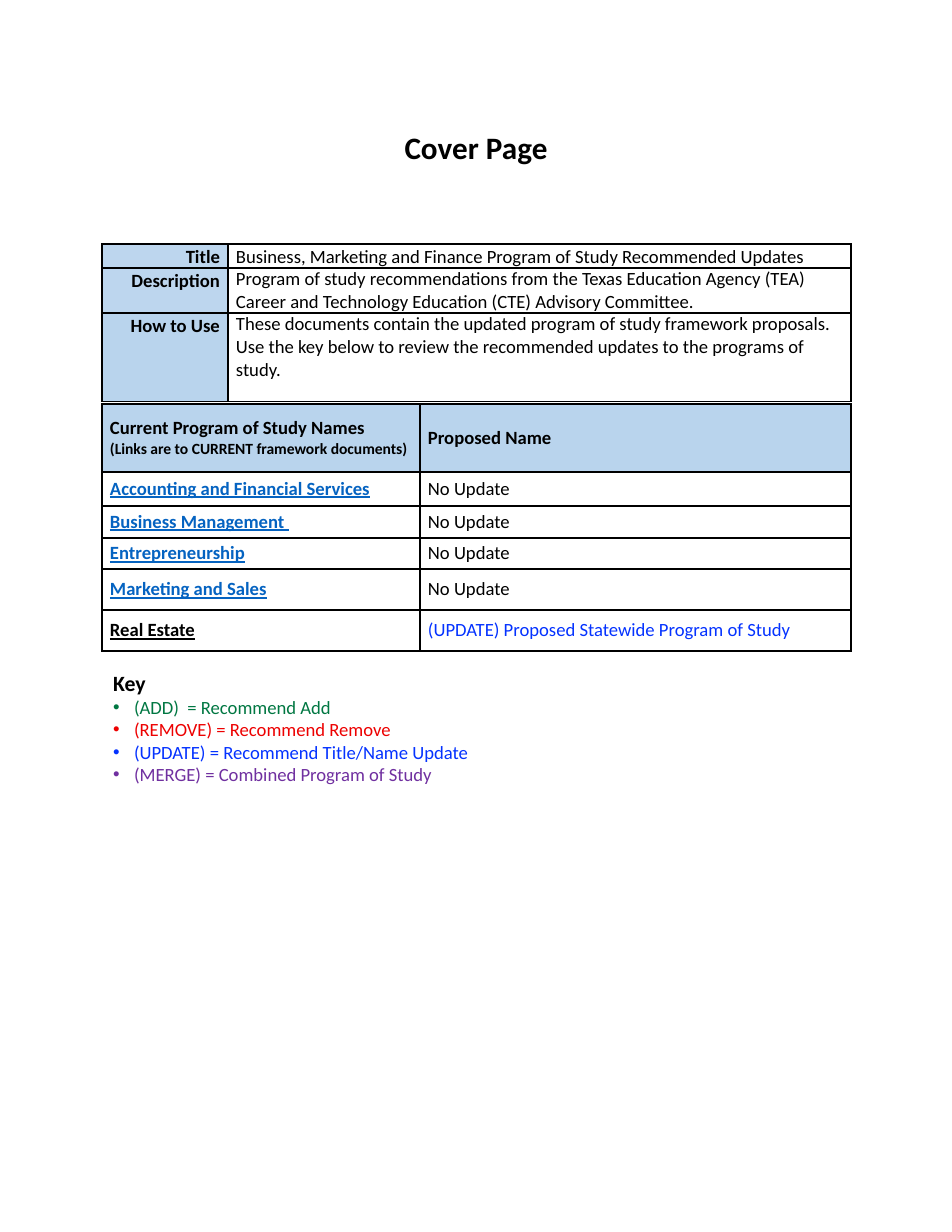
from lxml import etree
from pptx import Presentation
from pptx.dml.color import RGBColor
from pptx.enum.text import MSO_ANCHOR, MSO_AUTO_SIZE, PP_ALIGN
from pptx.oxml.ns import qn
from pptx.util import Emu, Pt

TOP, MIDDLE = MSO_ANCHOR.TOP, MSO_ANCHOR.MIDDLE
CENTER, RIGHT, LEFT = PP_ALIGN.CENTER, PP_ALIGN.RIGHT, PP_ALIGN.LEFT
GROW = MSO_AUTO_SIZE.SHAPE_TO_FIT_TEXT

COLORS = {
    "black": "000000", "white": "FFFFFF", "pale": "BDD6EE", "sky": "B9D4ED",
    "link": "0563C1", "green": "007742", "red": "ED0000", "blue": "0432FF",
    "purple": "7030A0",
}
FONT = "Calibri"
SCALE = 914400 / 112


def px(count):
    return Emu(round(count * SCALE))


def rgb(name):
    return RGBColor.from_string(COLORS[name])


def style(font, color="black", **values):
    base = {"name": FONT, "size": Pt(12), "bold": False}
    for key, value in {**base, **values}.items():
        setattr(font, key, value)
    font.color.rgb = rgb(color)


def write(par, text, align=LEFT, **look):
    par.alignment = align
    run = par.add_run()
    run.text = text
    style(run.font, **look)


def border(cell):
    props = cell._tc.get_or_add_tcPr()
    for spot, side in enumerate(("lnL", "lnR", "lnT", "lnB")):
        line = etree.Element(qn(f"a:{side}"), w=str(Pt(1)))
        fill = etree.SubElement(line, qn("a:solidFill"))
        etree.SubElement(fill, qn("a:srgbClr"), val=COLORS["black"])
        props.insert(spot, line)


def format_cell(cell, fill, anchor):
    values = {"margin_left": px(8), "margin_right": px(8), "margin_top": 0,
              "margin_bottom": 0, "vertical_anchor": anchor}
    for key, value in values.items():
        setattr(cell, key, value)
    if fill:
        cell.fill.solid()
        cell.fill.fore_color.rgb = rgb(fill)
    else:
        cell.fill.background()
    border(cell)


def add_grid(slide, left, top, widths, heights):
    frame = slide.shapes.add_table(len(heights), len(widths), px(left), px(top),
                                   px(sum(widths)), px(sum(heights)))
    table = frame.table
    table.first_row = table.horz_banding = False
    for col, width in zip(table.columns, widths):
        col.width = px(width)
    for row, height in zip(table.rows, heights):
        row.height = px(height)
    return table


def add_title(slide, left, top, width, height):
    title = slide.shapes.title
    box = {"left": left, "top": top, "width": width, "height": height}
    for key, value in box.items():
        setattr(title, key, px(value))
    frame = title.text_frame
    frame.word_wrap = False
    frame.auto_size = GROW
    frame.vertical_anchor = MIDDLE
    write(frame.paragraphs[0], "Cover Page", CENTER, size=Pt(20), bold=True)


def add_about(slide, left, top):
    rows = [
        ("Title", "Business, Marketing and Finance Program of Study "
                  "Recommended Updates", "pale"),
        ("Description", "Program of study recommendations from the Texas "
                        "Education Agency (TEA) Career and Technology "
                        "Education (CTE) Advisory Committee.", "pale"),
        ("How to Use", "These documents contain the updated program of study "
                       "framework proposals. Use the key below to review the "
                       "recommended updates to the programs of study.", "sky"),
    ]
    table = add_grid(slide, left, top, [126, 623], [24, 44, 89])
    for num, (label, text, fill) in enumerate(rows):
        head, body = table.cell(num, 0), table.cell(num, 1)
        format_cell(head, fill, TOP)
        format_cell(body, None, TOP)
        write(head.text_frame.paragraphs[0], label, RIGHT, bold=True)
        write(body.text_frame.paragraphs[0], text)
        head.text_frame.paragraphs[0].line_spacing = 1.07
        if num == 0:
            body.text_frame.paragraphs[0].line_spacing = 1.07


def add_programs(slide, left, top):
    same = ("No Update", "black")
    rows = [
        ("Accounting and Financial Services", "link", *same),
        ("Business Management ", "link", *same),
        ("Entrepreneurship", "link", *same),
        ("Marketing and Sales", "link", *same),
        ("Real Estate", "black",
         "(UPDATE) Proposed Statewide Program of Study", "blue"),
    ]
    table = add_grid(slide, left, top, [318, 431], [68, 34, 32, 31, 41, 41])

    # Header row
    first, second = table.cell(0, 0), table.cell(0, 1)
    for cell in (first, second):
        format_cell(cell, "sky", MIDDLE)
    write(first.text_frame.paragraphs[0], "Current Program of Study Names",
          bold=True)
    write(first.text_frame.add_paragraph(),
          "(Links are to CURRENT framework documents)", size=Pt(10), bold=True)
    write(second.text_frame.paragraphs[0], "Proposed Name", bold=True)

    # Program rows
    for num, (name, shade, status, color) in enumerate(rows, 1):
        head, body = table.cell(num, 0), table.cell(num, 1)
        format_cell(head, "white", MIDDLE)
        format_cell(body, None, MIDDLE)
        write(head.text_frame.paragraphs[0], name, color=shade, bold=True,
              underline=True)
        write(body.text_frame.paragraphs[0], status, color=color)


def add_bullet(par):
    props = par._p.get_or_add_pPr()
    props.set("marL", str(px(21)))
    props.set("indent", str(-px(21)))
    etree.SubElement(props, qn("a:buFont"), typeface="Arial")
    etree.SubElement(props, qn("a:buChar"), char="•")


def add_key(slide, left, top, width, height):
    items = [
        ("(ADD)  = Recommend Add", "green"),
        ("(REMOVE) = Recommend Remove", "red"),
        ("(UPDATE) = Recommend Title/Name Update", "blue"),
        ("(MERGE) = Combined Program of Study", "purple"),
    ]
    box = slide.shapes.add_textbox(px(left), px(top), px(width), px(height))
    frame = box.text_frame
    frame.word_wrap = True
    frame.auto_size = GROW
    write(frame.paragraphs[0], "Key", size=Pt(14), bold=True)
    for text, color in items:
        par = frame.add_paragraph()
        write(par, text, color=color)
        add_bullet(par)


def main():
    deck = Presentation()
    deck.slide_width, deck.slide_height = px(952), px(1232)
    slide = deck.slides.add_slide(deck.slide_layouts[5])
    add_title(slide, 0, 119, 952, 56)
    add_about(slide, 102, 244)
    add_programs(slide, 102, 404)
    add_key(slide, 102, 664, 638, 128)
    deck.save("out.pptx")


if __name__ == "__main__":
    main()
